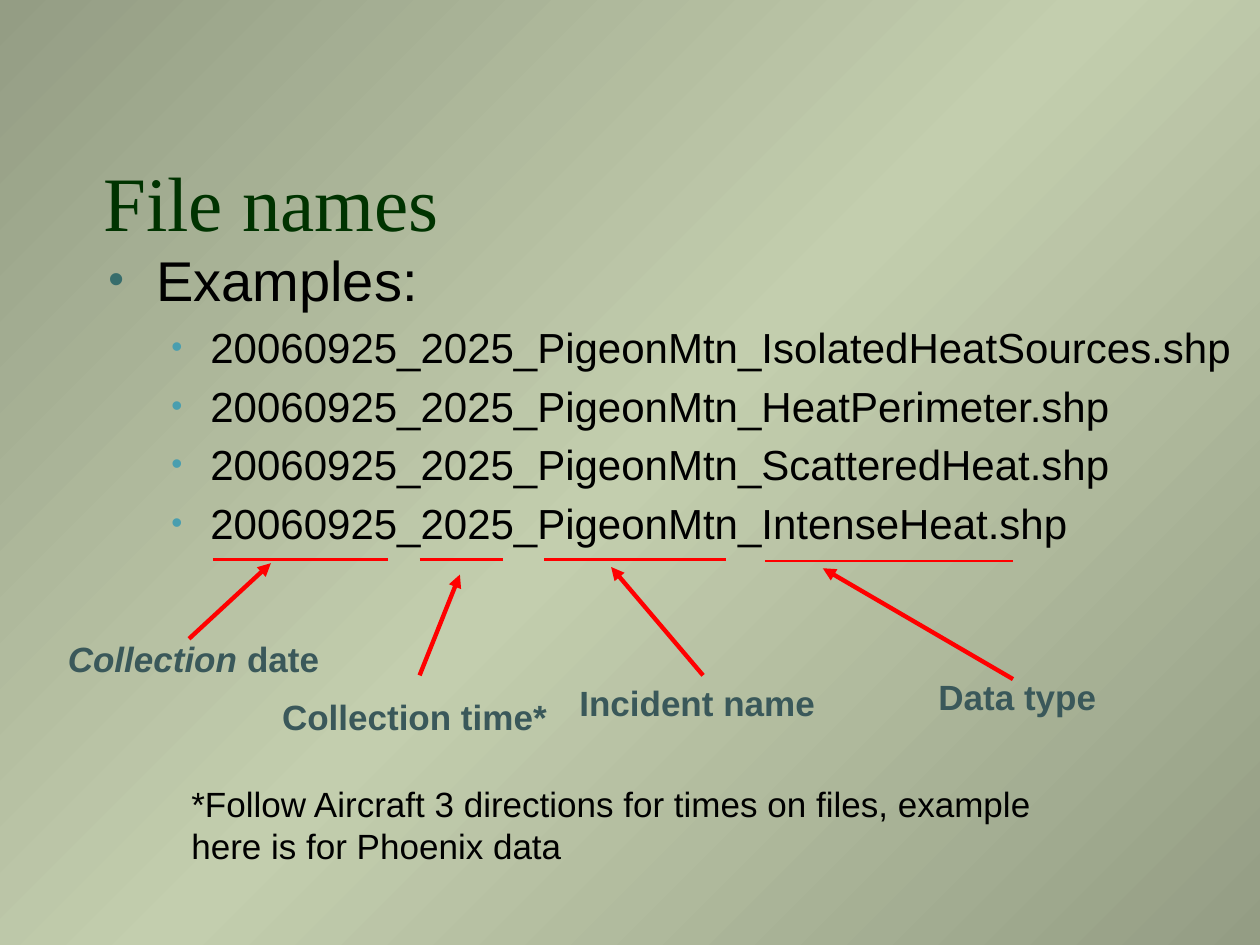
import copy

import pptx
import pptx.dml.color
import pptx.enum.shapes
import pptx.enum.text
import pptx.oxml
import pptx.oxml.ns
import pptx.util

Inches = pptx.util.Inches
Pt = pptx.util.Pt
qn = pptx.oxml.ns.qn


def color(value):
    return pptx.dml.color.RGBColor.from_string(value)


def add_element(parent, tag, **attributes):
    element = pptx.oxml.parse_xml(f"<a:{tag} {pptx.oxml.ns.nsdecls('a')}/>")
    for name, value in attributes.items():
        element.set(name, value)
    parent.append(element)
    return element


class SlideBuilder:
    BODY = {"name": "Arial", "size": Pt(32), "color": "000000"}
    ITEM = {**BODY, "size": Pt(24)}
    NOTE = {**BODY, "size": Pt(20)}
    LABEL = {**NOTE, "color": "3A585A", "bold": True}
    TITLE = {"name": "Times New Roman", "size": Pt(44), "color": "003300"}
    RED = "FF0000"

    def __init__(self, slide):
        self.slide = slide

    def format_font(self, font, style):
        for name, value in style.items():
            if name == "color":
                font.color.rgb = color(value)
            else:
                setattr(font, name, value)

    def place(self, shape, left, top, width, height):
        shape.left, shape.top = Inches(left), Inches(top)
        shape.width, shape.height = Inches(width), Inches(height)
        shape.text_frame.word_wrap = True
        shape.text_frame.auto_size = pptx.enum.text.MSO_AUTO_SIZE.NONE

    def add_run(self, paragraph, text, style):
        run = paragraph.add_run()
        run.text = text
        self.format_font(run.font, style)

    def background(self, edge, middle):
        fill = self.slide.background.fill
        fill.gradient()
        fill.gradient_angle = 315
        stop_list = next(self.slide.element.iter(qn("a:gsLst")))
        stop_list.insert(1, copy.deepcopy(stop_list[0]))
        for stop, position, value in zip(
                fill.gradient_stops, (0, 0.5, 1), (edge, middle, edge)):
            stop.position = position
            stop.color.rgb = color(value)

    def title(self, text, *box):
        heading = self.slide.shapes.title
        self.place(heading, *box)
        heading.text_frame.vertical_anchor = pptx.enum.text.MSO_ANCHOR.BOTTOM
        paragraph = heading.text_frame.paragraphs[0]
        paragraph.alignment = pptx.enum.text.PP_ALIGN.LEFT
        self.add_run(paragraph, text, self.TITLE)

    def bullet(self, paragraph, text, style, left, hang, tint, percent):
        properties = paragraph._p.get_or_add_pPr()
        properties.set("marL", str(Inches(left)))
        properties.set("indent", str(-Inches(hang)))
        add_element(add_element(properties, "buClr"), "srgbClr", val=tint)
        add_element(properties, "buSzPct", val=str(percent * 1000))
        add_element(properties, "buFont", typeface="Arial")
        add_element(properties, "buChar", char="•")
        self.add_run(paragraph, text, style)

    def examples(self, heading, items, *box):
        body = self.slide.placeholders[1]
        self.place(body, *box)
        frame = body.text_frame
        first = frame.paragraphs[0]
        first.space_before = Pt(0)
        self.bullet(first, heading, self.BODY, 0.38, 0.38, "376D6C", 80)
        for item in items:
            paragraph = frame.add_paragraph()
            paragraph.level = 1
            paragraph.space_before = Pt(4.8)
            self.bullet(paragraph, item, self.ITEM, 0.81, 0.31, "499EAF", 75)

    def text(self, runs, *box):
        note = self.slide.shapes.add_textbox(0, 0, 0, 0)
        self.place(note, *box)
        for text, style in runs:
            self.add_run(note.text_frame.paragraphs[0], text, style)

    def line(self, start, end, width, arrow=False):
        points = [Inches(value) for value in (*start, *end)]
        connector = self.slide.shapes.add_connector(
            pptx.enum.shapes.MSO_CONNECTOR.STRAIGHT, *points)
        connector.line.color.rgb = color(self.RED)
        connector.line.width = Pt(width)
        if arrow:
            add_element(connector.line._get_or_add_ln(), "tailEnd", type="triangle")
        add_element(connector._element.spPr, "effectLst")


def main():
    presentation = pptx.Presentation()
    presentation.slide_width = Inches(10)
    presentation.slide_height = Inches(7.5)
    builder = SlideBuilder(
        presentation.slides.add_slide(presentation.slide_layouts[1]))
    builder.background("949D84", "C3CEAE")

    # Title and example file names
    builder.title("File names", 0.72, 0.76, 8.5, 1.25)
    data_types = ("IsolatedHeatSources", "HeatPerimeter",
                  "ScatteredHeat", "IntenseHeat")
    builder.examples(
        "Examples:",
        [f"20060925_2025_PigeonMtn_{data_type}.shp" for data_type in data_types],
        0.76, 1.9, 9.15, 4.5)

    # Parts of a file name: label, label box, underline, arrow
    label = builder.LABEL
    name_parts = (
        ([("Collection", {**label, "italic": True}), (" date", label)],
         (0.44, 5.01, 2.26), (1.69, 3.08, 4.44), (1.5, 5.07), (2.15, 4.47)),
        ([("Collection time*", label)],
         (2.14, 5.47, 2.39), (3.33, 3.99, 4.44), (3.33, 5.36), (3.65, 4.56)),
        ([("Incident name", label)],
         (4.5, 5.36, 2.26), (4.32, 5.76, 4.44), (5.58, 5.36), (4.85, 4.5)),
        ([("Data type", label)],
         (7.35, 5.31, 1.64), (6.07, 8.04, 4.45), (8.04, 5.39), (6.53, 4.51)),
    )
    for runs, label_box, (left, right, level), tail, tip in name_parts:
        builder.text(runs, *label_box, 0.43)
        builder.line((left, level), (right, level), 1.25)
        builder.line(tail, tip, 2.5, arrow=True)

    # Footnote
    footnote = ("*Follow Aircraft 3 directions for times on files, "
                "example here is for Phoenix data")
    builder.text([(footnote, builder.NOTE)], 1.42, 6.16, 7.42, 0.77)

    presentation.save("out.pptx")


if __name__ == "__main__":
    main()
